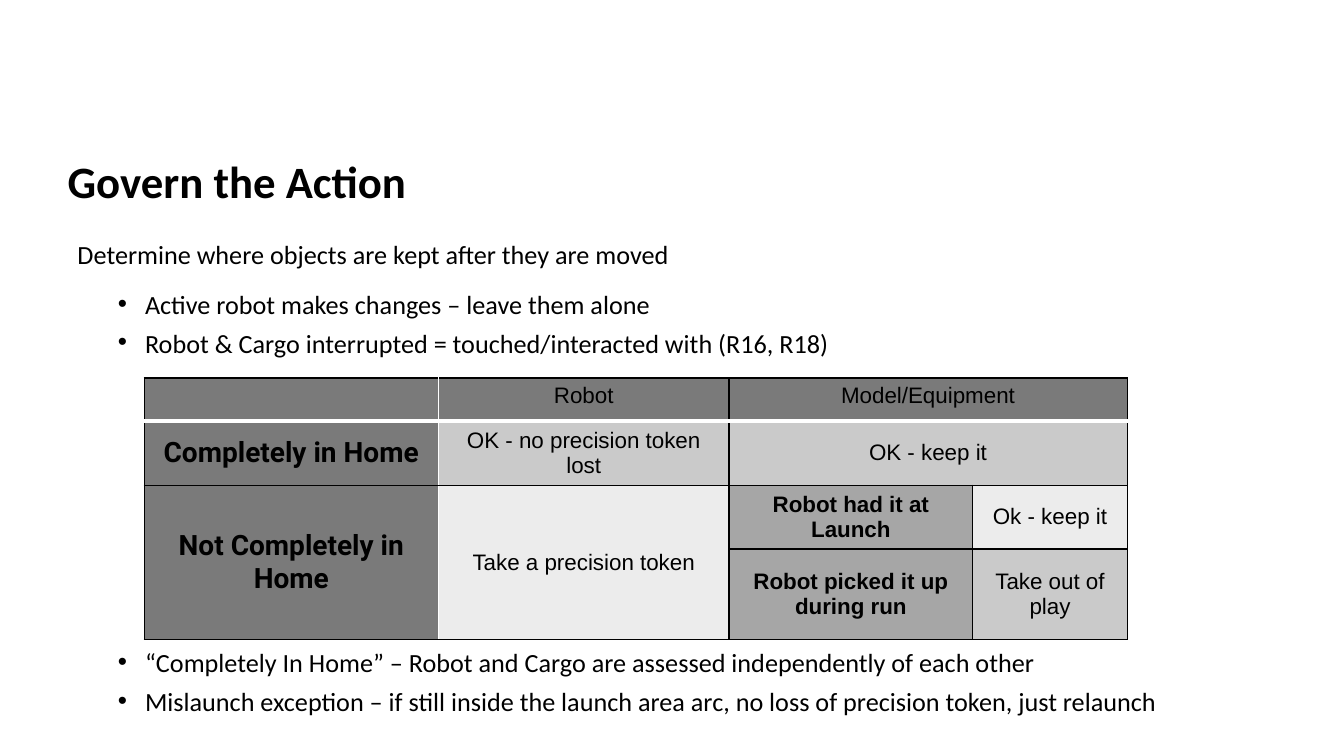
from dataclasses import dataclass

import lxml.etree
import pptx
import pptx.dml.color
import pptx.enum.text
import pptx.oxml.ns
import pptx.util
from pptx.util import Inches


@dataclass(frozen=True)
class Theme:
    ink: str = "000000"
    white: str = "FFFFFF"
    header: str = "7A7A7A"
    label: str = "A6A6A6"
    band: str = "CACACA"
    pale: str = "ECECEC"
    body_font: str = "Calibri"
    cell_font: str = "Arial"
    head_font: str = "Roboto"
    title_size: float = 32
    body_size: float = 18.7
    cell_size: float = 16
    head_size: float = 20


THEME = Theme()
CENTER = pptx.enum.text.PP_ALIGN.CENTER
MIDDLE = pptx.enum.text.MSO_ANCHOR.MIDDLE
TOP = pptx.enum.text.MSO_ANCHOR.TOP

COLUMNS = [2.92, 2.88, 2.42, 1.53]
ROWS = [0.43, 0.62, 0.62, 0.9]
# Fill of every grid position, then (row, column, text) and merged ranges
FILLS = [
    [THEME.header] * 4,
    [THEME.header, THEME.band, THEME.band, THEME.band],
    [THEME.header, THEME.pale, THEME.label, THEME.pale],
    [THEME.header, THEME.pale, THEME.label, THEME.band],
]
CELL_TEXTS = [
    (0, 1, "Robot"),
    (0, 2, "Model/Equipment"),
    (1, 0, "Completely in Home"),
    (1, 1, "OK - no precision token lost"),
    (1, 2, "OK - keep it"),
    (2, 0, "Not Completely in Home"),
    (2, 1, "Take a precision token"),
    (2, 2, "Robot had it at Launch"),
    (2, 3, "Ok - keep it"),
    (3, 2, "Robot picked it up during run"),
    (3, 3, "Take out of play"),
]
MERGES = [((0, 2), (0, 3)), ((1, 2), (1, 3)), ((2, 0), (3, 0)), ((2, 1), (3, 1))]


def color(value):
    return pptx.dml.color.RGBColor.from_string(value)


def add_element(parent, tag, **attributes):
    return lxml.etree.SubElement(parent, pptx.oxml.ns.qn(tag), **attributes)


def write_text(para, text, *, font=THEME.body_font, size=THEME.body_size, bold=False):
    span = para.add_run()
    span.text = text
    span.font.name = font
    span.font.size = pptx.util.Pt(size)
    span.font.bold = bold
    span.font.color.rgb = color(THEME.ink)


def add_box(page, left, top, width, height):
    box = page.shapes.add_textbox(*map(Inches, (left, top, width, height)))
    box.text_frame.word_wrap = True
    return box.text_frame


def add_title(page, text):
    frame = add_box(page, 0.67, 1.39, 12.09, 0.81)
    frame.margin_left = frame.margin_right = frame.margin_top = frame.margin_bottom = 0
    frame.vertical_anchor = MIDDLE
    write_text(frame.paragraphs[0], text, size=THEME.title_size, bold=True)


def make_bullet(para):
    para.level = 1
    properties = para._p.get_or_add_pPr()
    properties.set("marL", str(Inches(0.67)))
    properties.set("indent", str(Inches(-0.27)))
    bullet_color = add_element(properties, "a:buClr")
    add_element(bullet_color, "a:srgbClr", val=THEME.ink)
    add_element(properties, "a:buFont", typeface="Arial")
    add_element(properties, "a:buChar", char="•")


def add_body(page, top, height, bullets, lead=None):
    """Write an optional lead line followed by bullets."""
    frame = add_box(page, 0.67, top, 12.09, height)
    lines = ([lead] if lead else []) + bullets
    for index, text in enumerate(lines):
        para = frame.add_paragraph() if index else frame.paragraphs[0]
        para.line_spacing = 0.7
        para.space_before = pptx.util.Pt(12 if index else 0)
        para.space_after = pptx.util.Pt(8 if text == lead else 0)
        if text != lead:
            make_bullet(para)
        write_text(para, text)


def style_cell(cell, row, column):
    """Black grid, with white lines under the header and beside the labels."""
    edges = {
        "L": (THEME.white if column == 1 else THEME.ink, 1),
        "R": (THEME.white if column == 0 else THEME.ink, 1),
        "T": (THEME.white if row == 1 else THEME.ink, 1),
        "B": (THEME.white, 3) if row == 0 else (THEME.ink, 1),
    }
    properties = cell._tc.get_or_add_tcPr()
    for side, (line_color, width) in edges.items():
        line = add_element(properties, f"a:ln{side}", w=str(pptx.util.Pt(width)))
        fill = add_element(line, "a:solidFill")
        add_element(fill, "a:srgbClr", val=line_color)
    cell.fill.solid()
    cell.fill.fore_color.rgb = color(FILLS[row][column])
    cell.vertical_anchor = MIDDLE if row else TOP


def add_rulings_table(page):
    frame = page.shapes.add_table(
        len(ROWS), len(COLUMNS), Inches(1.43), Inches(3.75),
        Inches(sum(COLUMNS)), Inches(sum(ROWS)))
    table = frame.table
    table.first_row = table.horz_banding = False
    for column, width in zip(table.columns, COLUMNS):
        column.width = Inches(width)
    for row, height in zip(table.rows, ROWS):
        row.height = Inches(height)
    for row in range(len(ROWS)):
        for column in range(len(COLUMNS)):
            style_cell(table.cell(row, column), row, column)
    for start, end in MERGES:
        table.cell(*start).merge(table.cell(*end))
    for row, column, text in CELL_TEXTS:
        para = table.cell(row, column).text_frame.paragraphs[0]
        para.alignment = CENTER
        heading = column == 0
        write_text(
            para, text,
            font=THEME.head_font if heading else THEME.cell_font,
            size=THEME.head_size if heading else THEME.cell_size,
            bold=heading or FILLS[row][column] == THEME.label)


def main():
    deck = pptx.Presentation()
    deck.slide_width, deck.slide_height = Inches(13.33), Inches(7.5)
    page = deck.slides.add_slide(deck.slide_layouts[6])

    # Heading and opening points
    add_title(page, "Govern the Action")
    add_body(page, 2.4, 1.3, [
        "Active robot makes changes – leave them alone",
        "Robot & Cargo interrupted = touched/interacted with (R16, R18)",
    ], lead="Determine where objects are kept after they are moved")

    # Rulings by place and object
    add_rulings_table(page)

    # Closing points
    add_body(page, 6.45, 0.89, [
        "“Completely In Home” – Robot and Cargo are assessed independently of each other",
        "Mislaunch exception – if still inside the launch area arc, "
        "no loss of precision token, just relaunch",
    ])
    deck.save("out.pptx")


if __name__ == "__main__":
    main()
